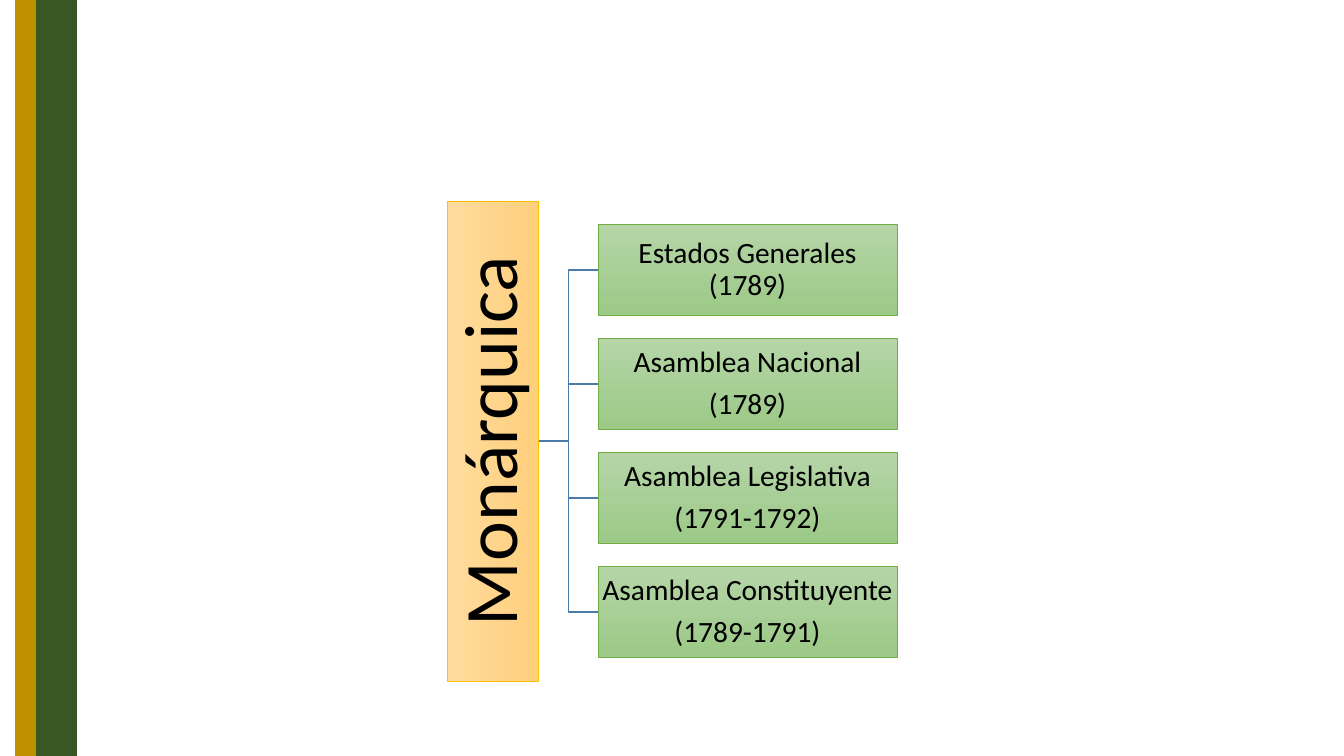
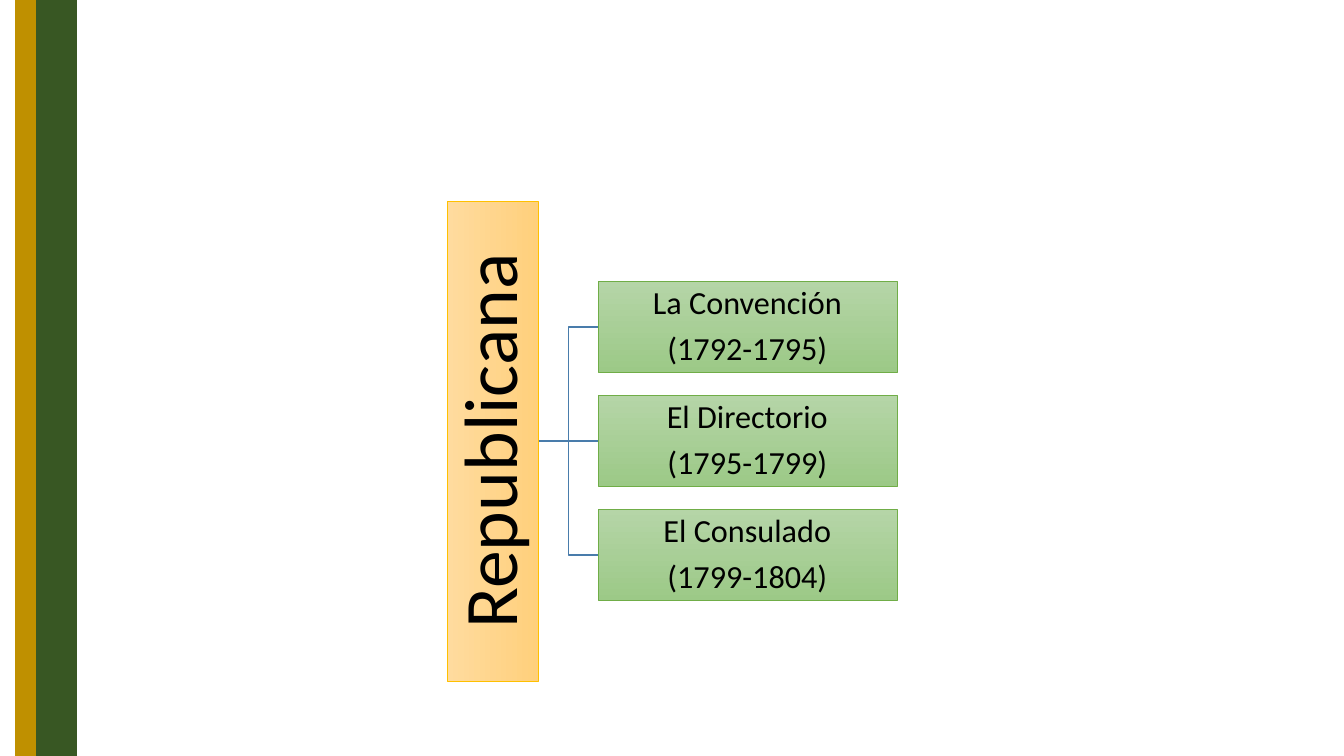
import pptx
import pptx.dml.color
import pptx.enum.shapes
import pptx.enum.text
import pptx.oxml.ns
import pptx.util
from lxml import etree

RGBColor = pptx.dml.color.RGBColor
RECTANGLE = pptx.enum.shapes.MSO_SHAPE.RECTANGLE
CONNECTOR = pptx.enum.shapes.MSO_CONNECTOR

# Page, in px
PAGE_WIDTH, PAGE_HEIGHT = 1344, 756
SCALE = 12192000 / PAGE_WIDTH

# Shared look
FONT = "Calibri"
BLACK = RGBColor(0x00, 0x00, 0x00)
DARK_GREEN = RGBColor(0x38, 0x57, 0x23)
OCHRE = RGBColor(0xBF, 0x90, 0x00)
LINK_BLUE = RGBColor(0x49, 0x7C, 0xAB)
GOLD_LINE = RGBColor(0xFF, 0xC0, 0x00)
GOLD_FILL = (RGBColor(0xFF, 0xDB, 0x9E), RGBColor(0xFF, 0xD0, 0x7C))
GREEN_LINE = RGBColor(0x70, 0xAD, 0x47)
GREEN_FILL = (RGBColor(0xB5, 0xD5, 0xA7), RGBColor(0x9C, 0xC9, 0x87))
BANDS = ((35, 42, DARK_GREEN), (15, 21, OCHRE))  # left, width, colour

# Tree layout, in px
MIDDLE = 441
BOX_HEIGHT = 91
ROOT_CENTRE, ROOT_LENGTH, ROOT_SIZE = 493, 480, 54
ROOT_RIGHT = 539
BRANCH_LEFT, BRANCH_WIDTH, BRANCH_PITCH = 598, 299, 114

# Root, branch text size, branches as lists of paragraphs
TREES = (
    ("Monárquica", 21, (
        ["Estados Generales (1789)"],
        ["Asamblea Nacional", "(1789)"],
        ["Asamblea Legislativa", "(1791-1792)"],
        ["Asamblea Constituyente", "(1789-1791)"],
    )),
    ("Republicana", 23, (
        ["La Convención", "(1792-1795)"],
        ["El Directorio", "(1795-1799)"],
        ["El Consulado", "(1799-1804)"],
    )),
)


def px(length):
    return pptx.util.Emu(round(length * SCALE))


def add_rectangle(page, left, top, width, height):
    box = page.shapes.add_shape(RECTANGLE, px(left), px(top), px(width), px(height))
    box.shadow.inherit = False
    return box


def add_bands(page):
    for left, width, colour in BANDS:
        band = add_rectangle(page, left, 0, width, PAGE_HEIGHT)
        band.fill.solid()
        band.fill.fore_color.rgb = colour
        band.line.fill.background()


def paint(box, gradient, line_colour):
    box.fill.gradient()
    box.fill.gradient_angle = 270
    for stop, colour in zip(box.fill.gradient_stops, gradient):
        stop.color.rgb = colour
    box.line.color.rgb = line_colour
    box.line.width = pptx.util.Pt(0.5)


def write(box, lines, size, inset):
    frame = box.text_frame
    frame.word_wrap = True
    frame.vertical_anchor = pptx.enum.text.MSO_ANCHOR.MIDDLE
    frame.margin_left = frame.margin_right = px(inset)
    frame.margin_top = frame.margin_bottom = px(inset)
    frame.text = "\n".join(lines)
    for para in frame.paragraphs:
        para.alignment = pptx.enum.text.PP_ALIGN.CENTER
        para.line_spacing = 0.9
        para.space_after = pptx.util.Pt(0.35 * size)
        for span in para.runs:
            span.font.name = FONT
            span.font.size = pptx.util.Pt(size)
            span.font.color.rgb = BLACK


def add_link(page, centre):
    kind = CONNECTOR.STRAIGHT if centre == MIDDLE else CONNECTOR.ELBOW
    link = page.shapes.add_connector(
        kind, px(ROOT_RIGHT), px(MIDDLE), px(BRANCH_LEFT), px(centre))
    link.line.color.rgb = LINK_BLUE
    link.line.width = pptx.util.Pt(1)
    etree.SubElement(link._element.spPr, pptx.oxml.ns.qn("a:effectLst"))


def add_root(page, name):
    # Laid out flat, then turned about its centre
    root = add_rectangle(page, ROOT_CENTRE - ROOT_LENGTH / 2,
                         MIDDLE - BOX_HEIGHT / 2, ROOT_LENGTH, BOX_HEIGHT)
    root.rotation = 270
    paint(root, GOLD_FILL, GOLD_LINE)
    write(root, [name], ROOT_SIZE, 4)


def add_branch(page, centre, lines, size):
    branch = add_rectangle(page, BRANCH_LEFT, centre - BOX_HEIGHT / 2,
                           BRANCH_WIDTH, BOX_HEIGHT)
    paint(branch, GREEN_FILL, GREEN_LINE)
    write(branch, lines, size, 1)


def add_tree(page, name, size, branches):
    first = MIDDLE - BRANCH_PITCH * (len(branches) - 1) / 2
    centres = [first + BRANCH_PITCH * index for index in range(len(branches))]
    for centre in centres:
        add_link(page, centre)
    add_root(page, name)
    for centre, lines in zip(centres, branches):
        add_branch(page, centre, lines, size)


def main():
    deck = pptx.Presentation()
    deck.slide_width, deck.slide_height = px(PAGE_WIDTH), px(PAGE_HEIGHT)
    blank = deck.slide_layouts.get_by_name("Blank")
    for name, size, branches in TREES:
        page = deck.slides.add_slide(blank)
        add_tree(page, name, size, branches)
        add_bands(page)
    deck.save("out.pptx")


if __name__ == "__main__":
    main()
